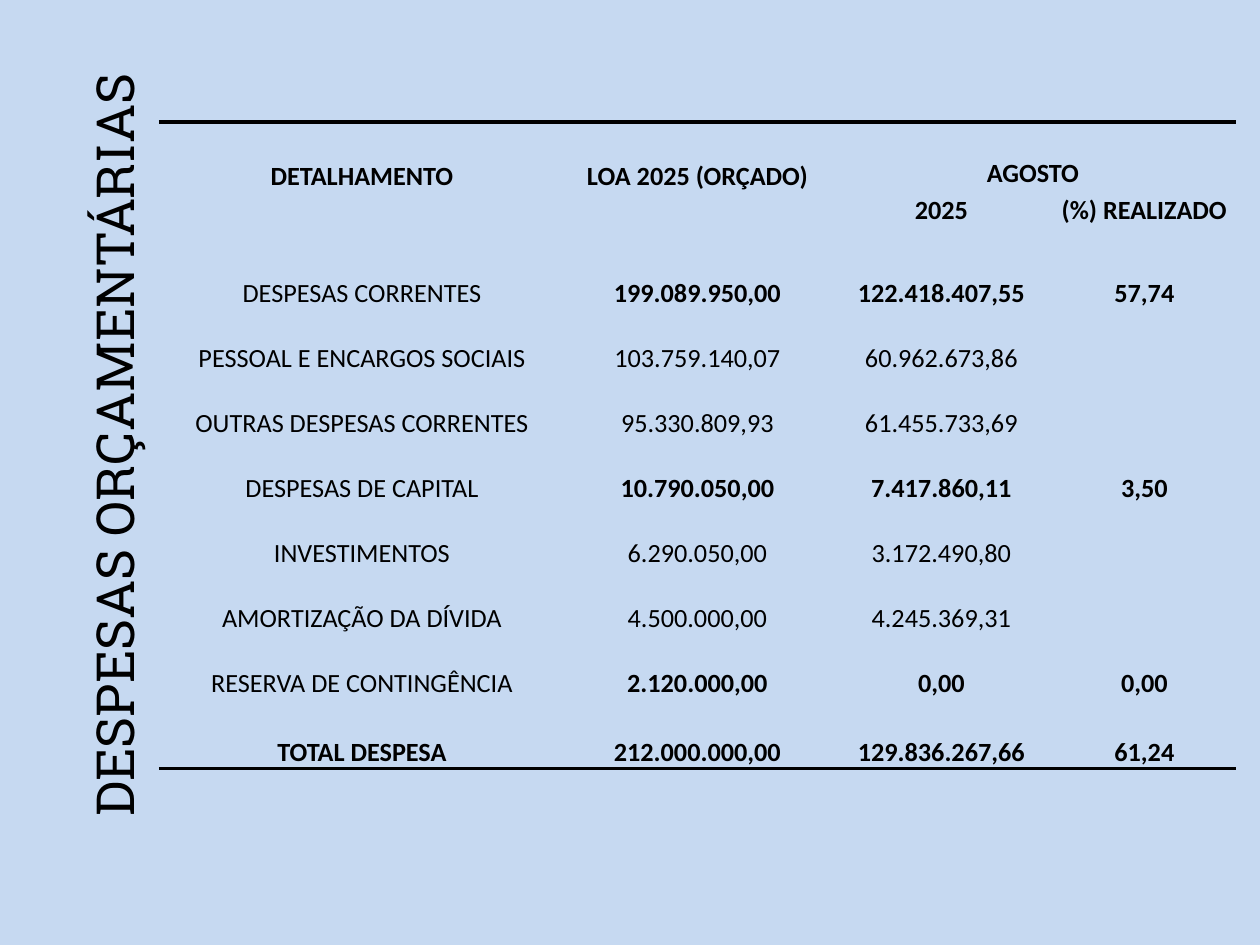
from dataclasses import dataclass

from lxml import etree
from pptx import Presentation
from pptx import util as u
from pptx.dml.color import RGBColor
from pptx.enum import text
from pptx.oxml.ns import qn

PX = 914400 // 126
COLORS = {"background": "C6D9F1", "ink": "000000"}
PLAIN_TABLE_STYLE = "{2D5ABB26-0587-4C30-8999-92F81FD0307C}"
COLUMN_WIDTHS = [406, 265, 223, 183]
ROW_HEIGHTS = [68, 40, 80] + [65] * 6 + [69]
TITLE_CENTER = (114, 445)
TITLE_LENGTH, TITLE_DEPTH = 760, 90


@dataclass
class Expense:
    label: str
    budgeted: str
    spent: str
    percent: str = ""
    total: bool = False

    def values(self) -> list[str]:
        return [self.label, self.budgeted, self.spent, self.percent]


EXPENSES = [
    Expense("DESPESAS CORRENTES", "199.089.950,00", "122.418.407,55", "57,74"),
    Expense("PESSOAL E ENCARGOS SOCIAIS", "103.759.140,07", "60.962.673,86"),
    Expense("OUTRAS DESPESAS CORRENTES", "95.330.809,93", "61.455.733,69"),
    Expense("DESPESAS DE CAPITAL", "10.790.050,00", "7.417.860,11", "3,50"),
    Expense("INVESTIMENTOS", "6.290.050,00", "3.172.490,80"),
    Expense("AMORTIZAÇÃO DA DÍVIDA", "4.500.000,00", "4.245.369,31"),
    Expense("RESERVA DE CONTINGÊNCIA", "2.120.000,00", "0,00", "0,00"),
    Expense("TOTAL DESPESA", "212.000.000,00", "129.836.267,66", "61,24", total=True),
]


def px(length: int) -> u.Emu:
    return u.Emu(length * PX)


def color(name: str) -> RGBColor:
    return RGBColor.from_string(COLORS[name])


def format_text(frame, font: str, size: int, bold: bool) -> None:
    for paragraph in frame.paragraphs:
        paragraph.alignment = text.PP_ALIGN.CENTER
        for run in paragraph.runs:
            run.font.name = font
            run.font.size = u.Pt(size)
            run.font.bold = bold
            run.font.color.rgb = color("ink")


def write_cell(cell, words: str, bold: bool, anchor=text.MSO_ANCHOR.BOTTOM) -> None:
    cell.text_frame.text = words
    format_text(cell.text_frame, "Calibri", 15, bold)
    cell.vertical_anchor = anchor


def add_border(cell, side: str) -> None:
    """Draw a 2 pt rule on one side: lnT is the top, lnB the bottom."""
    line = etree.Element(qn(f"a:{side}"), w=str(u.Pt(2)))
    fill = etree.SubElement(line, qn("a:solidFill"))
    etree.SubElement(fill, qn("a:srgbClr"), val=COLORS["ink"])
    cell._tc.get_or_add_tcPr().insert(0, line)


def add_title(slide) -> None:
    """Turn the title a quarter to the left about its centre."""
    title = slide.shapes.title
    center_x, center_y = TITLE_CENTER
    title.left, title.top = px(center_x - TITLE_LENGTH // 2), px(center_y - TITLE_DEPTH // 2)
    title.width, title.height = px(TITLE_LENGTH), px(TITLE_DEPTH)
    title.rotation = 270
    frame = title.text_frame
    frame.text = "DESPESAS ORÇAMENTÁRIAS"
    frame.word_wrap = True
    frame.auto_size = text.MSO_AUTO_SIZE.NONE
    frame.vertical_anchor = text.MSO_ANCHOR.MIDDLE
    frame.margin_left = frame.margin_right = 0
    format_text(frame, "Roboto Slab", 30, False)


def add_expense_table(slide) -> None:
    frame = slide.shapes.add_table(
        len(ROW_HEIGHTS), len(COLUMN_WIDTHS), px(159), px(122),
        px(sum(COLUMN_WIDTHS)), px(sum(ROW_HEIGHTS)))
    table = frame.table
    table.first_row = table.horz_banding = False
    table._tbl.tblPr.find(qn("a:tableStyleId")).text = PLAIN_TABLE_STYLE
    for column, width in zip(table.columns, COLUMN_WIDTHS):
        column.width = px(width)
    for row, height in zip(table.rows, ROW_HEIGHTS):
        row.height = px(height)
    for cell in table.iter_cells():
        cell.fill.solid()
        cell.fill.fore_color.rgb = color("background")
        cell.margin_left = cell.margin_right = cell.margin_top = px(1)
        cell.margin_bottom = 0

    # Headings span two rows, the month spans two columns,
    # and each pair of detail rows shares one empty percentage cell.
    for first, last in [((0, 0), (1, 0)), ((0, 1), (1, 1)), ((0, 2), (0, 3)),
                        ((3, 3), (4, 3)), ((6, 3), (7, 3))]:
        table.cell(*first).merge(table.cell(*last))

    middle = text.MSO_ANCHOR.MIDDLE
    write_cell(table.cell(0, 0), "DETALHAMENTO", True, middle)
    write_cell(table.cell(0, 1), "LOA 2025 (ORÇADO)", True, middle)
    write_cell(table.cell(0, 2), "AGOSTO", True)
    write_cell(table.cell(1, 2), "2025", True, middle)
    write_cell(table.cell(1, 3), "(%) REALIZADO", True, middle)

    for row, expense in enumerate(EXPENSES, start=2):
        for column, value in enumerate(expense.values()):
            if value:
                bold = expense.total or (column > 0 and bool(expense.percent))
                write_cell(table.cell(row, column), value, bold)

    for column in range(len(COLUMN_WIDTHS)):
        add_border(table.cell(0, column), "lnT")
        add_border(table.cell(len(ROW_HEIGHTS) - 1, column), "lnB")


def main() -> None:
    deck = Presentation()
    deck.slide_width, deck.slide_height = u.Inches(10), u.Inches(7.5)
    slide = deck.slides.add_slide(deck.slide_layouts[5])
    slide.background.fill.solid()
    slide.background.fill.fore_color.rgb = color("background")
    add_title(slide)
    add_expense_table(slide)
    deck.save("out.pptx")


if __name__ == "__main__":
    main()
